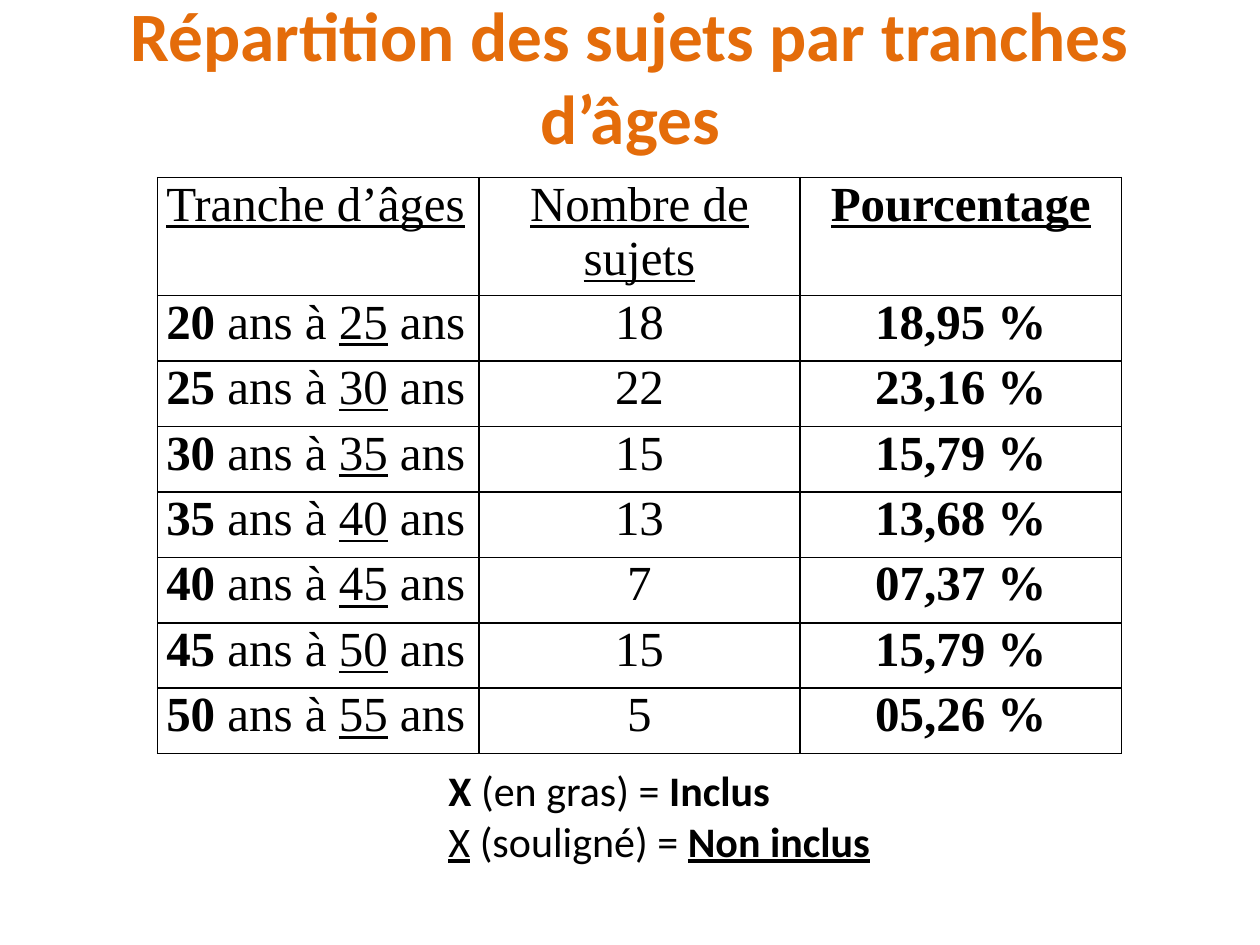
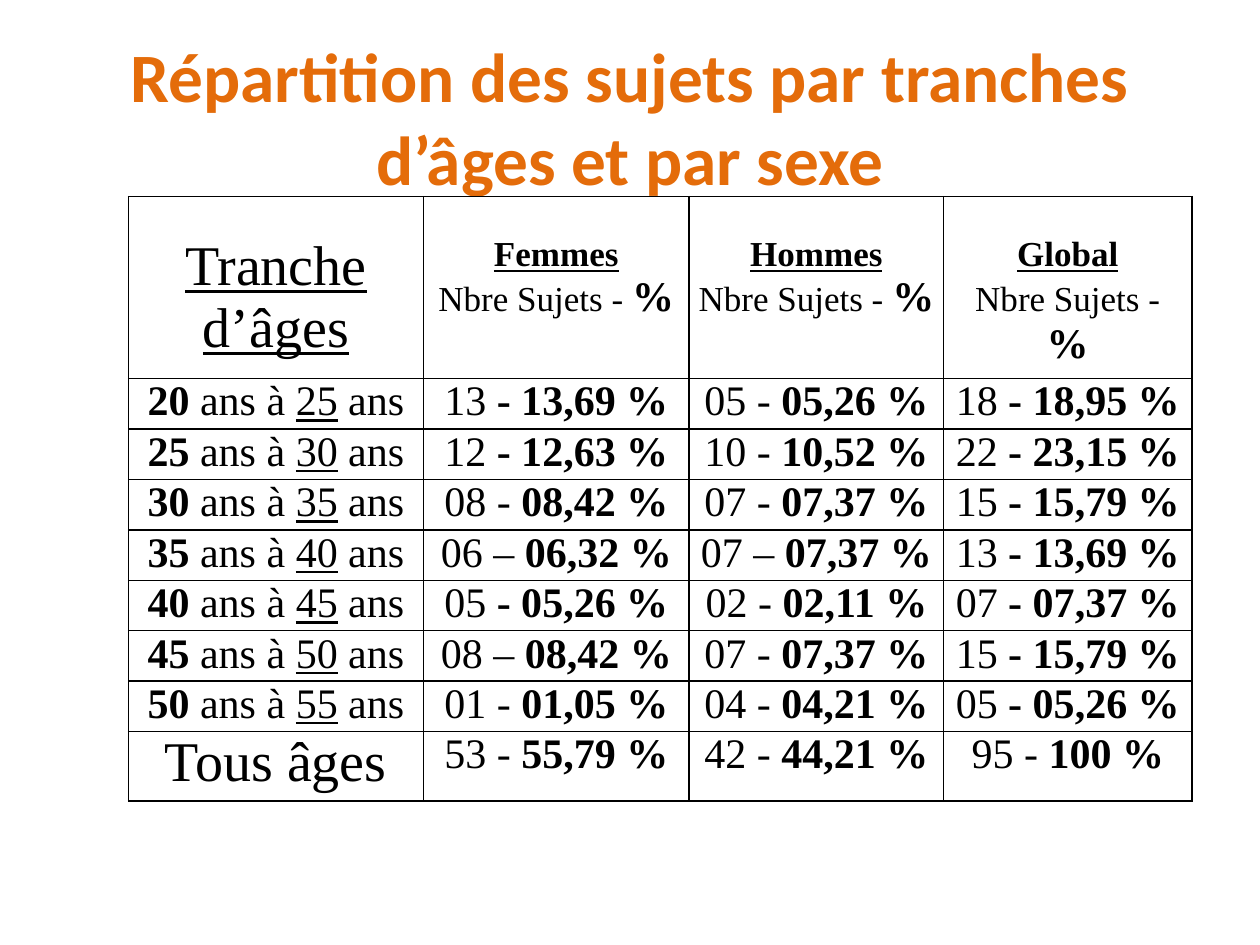
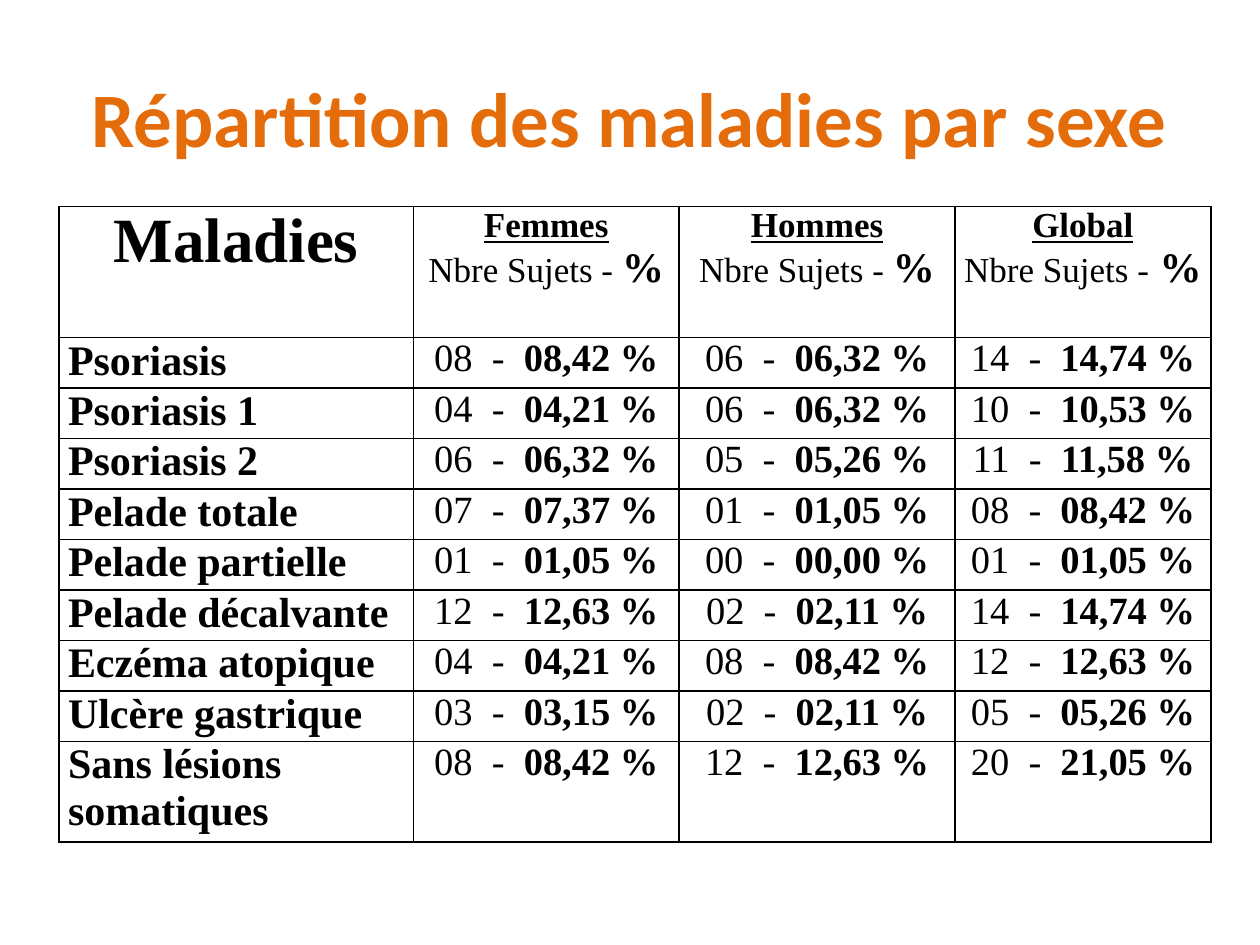
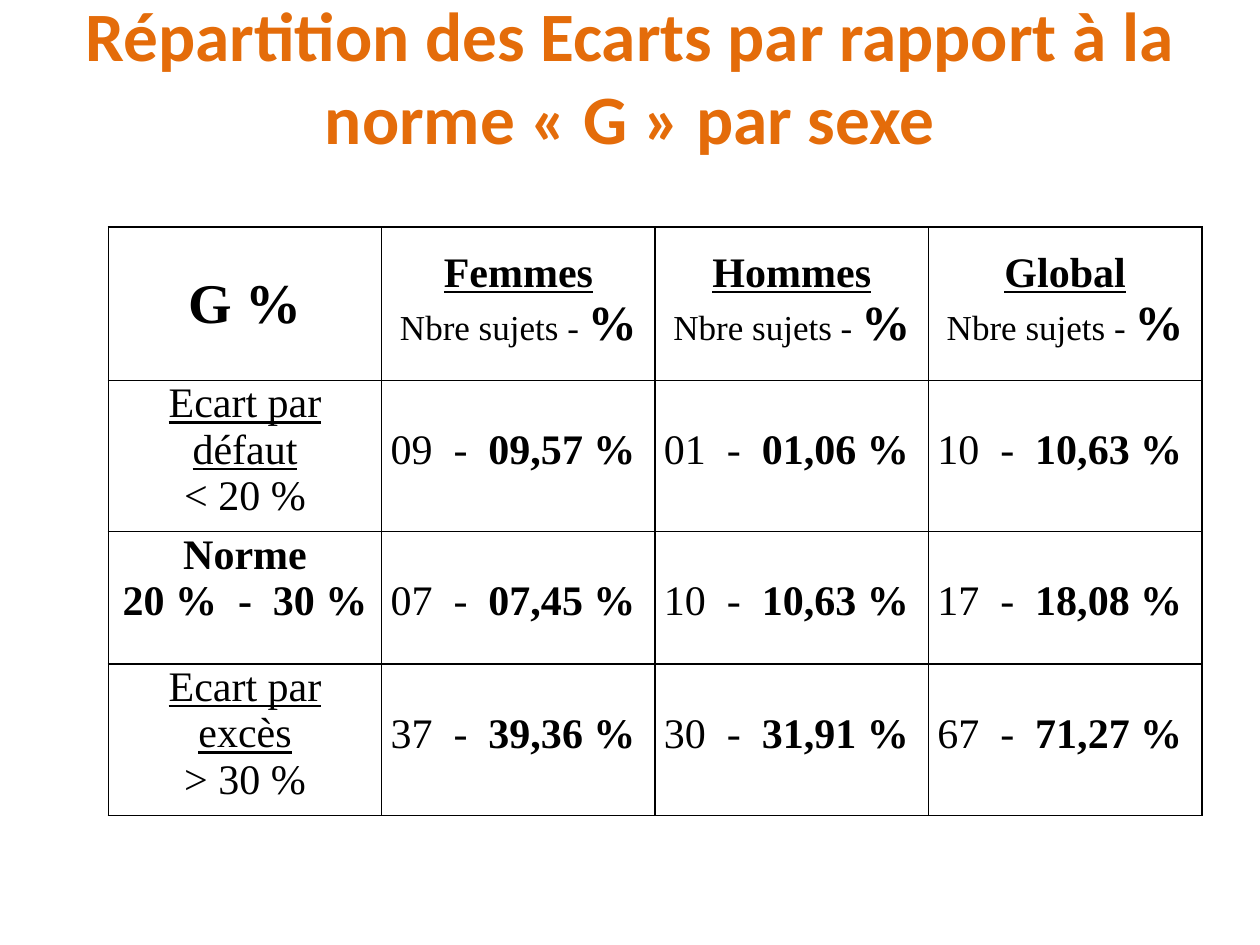
from dataclasses import dataclass

from lxml.etree import SubElement
from pptx import Presentation
from pptx.dml.color import RGBColor
from pptx.enum.text import MSO_ANCHOR, PP_ALIGN
from pptx.oxml.ns import qn
from pptx.util import Inches, Pt

COLORS = {"title": "E46C0A", "text": "000000"}
TITLE_FONT = "Calibri"
TABLE_FONT = "Times New Roman"
LEFT, CENTER = PP_ALIGN.LEFT, PP_ALIGN.CENTER


@dataclass
class Line:
    """A paragraph; *...* marks bold text and _..._ underlined text."""
    text: str
    size: float
    bold_size: float = 0
    align: PP_ALIGN = CENTER
    spacing: float = 1.0


def split_runs(text):
    """Yield (text, bold, underline) for each stretch of marked text."""
    bold = underline = False
    chunk = ""
    for character in text:
        if character not in "*_":
            chunk += character
            continue
        if chunk:
            yield chunk, bold, underline
        chunk = ""
        if character == "*":
            bold = not bold
        else:
            underline = not underline
    if chunk:
        yield chunk, bold, underline


def write(frame, lines, font=TABLE_FONT, color="text"):
    for index, line in enumerate(lines):
        paragraph = frame.add_paragraph() if index else frame.paragraphs[0]
        paragraph.alignment = line.align
        paragraph.line_spacing = line.spacing
        for text, bold, underline in split_runs(line.text):
            run = paragraph.add_run()
            run.text = text
            run.font.name = font
            run.font.size = Pt(bold and line.bold_size or line.size)
            run.font.bold = bold
            run.font.underline = underline
            run.font.color.rgb = RGBColor.from_string(COLORS[color])


class Deck:
    def __init__(self):
        self.presentation = Presentation()
        self.presentation.slide_width = Inches(10)
        self.presentation.slide_height = Inches(7.5)
        self.slide = None

    def new_slide(self, title, size=39.6, raised=0):
        layout = self.presentation.slide_layouts[6]
        self.slide = self.presentation.slides.add_slide(layout)
        frame = self.text(0.5, 0.3, 9, 1.25, [Line(f"*{title}*", size)], color="title")
        frame.vertical_anchor = MSO_ANCHOR.MIDDLE
        frame.margin_bottom = Inches(0.05 + raised)

    def text(self, left, top, width, height, lines, color="text"):
        shape = self.slide.shapes.add_textbox(
            Inches(left), Inches(top), Inches(width), Inches(height))
        frame = shape.text_frame
        frame.word_wrap = True
        write(frame, lines, TITLE_FONT, color)
        return frame

    def table(self, left, top, widths, heights, rows, tops=None):
        """tops maps (row, column) to the space above the text of that cell."""
        shape = self.slide.shapes.add_table(
            len(heights), len(widths), Inches(left), Inches(top),
            Inches(sum(widths)), Inches(sum(heights)))
        table = shape.table
        table.first_row = table.horz_banding = False
        for column, width in zip(table.columns, widths):
            column.width = Inches(width)
        for row, height in zip(table.rows, heights):
            row.height = Inches(height)
        for row_index, row in enumerate(rows):
            for column_index, lines in enumerate(row):
                cell = table.cell(row_index, column_index)
                cell.margin_left = cell.margin_right = Inches(0.07)
                cell.margin_top = Inches((tops or {}).get((row_index, column_index), 0))
                cell.margin_bottom = 0
                write(cell.text_frame, lines)
                self.borders(cell)
                cell.fill.background()

    def borders(self, cell):
        properties = cell._tc.get_or_add_tcPr()
        for side in ("a:lnL", "a:lnR", "a:lnT", "a:lnB"):
            border = SubElement(properties, qn(side), w=str(Pt(1)))
            fill = SubElement(border, qn("a:solidFill"))
            SubElement(fill, qn("a:srgbClr"), val=COLORS["text"])


def age_label(start):
    return f"*{start}* ans à _{start + 5}_ ans"


def sex_headers(endings, size, label, label_size, percent_size, spacing=1.0):
    return [[Line(f"*_{sex}_*", size, spacing=spacing),
             Line(label + ending, label_size, percent_size)]
            for sex, ending in zip(("Femmes", "Hommes", "Global"), endings)]


def cells(texts, size, align=CENTER):
    return [[Line(text, size, align=align)] for text in texts]


def main():
    deck = Deck()
    ages = range(20, 55, 5)
    raised = 0.66

    # Subjects by age group
    deck.new_slide("Répartition des sujets par tranches d’âges", raised=raised)
    counts = [("18", "18,95"), ("22", "23,16"), ("15", "15,79"), ("13", "13,68"),
              ("7", "07,37"), ("15", "15,79"), ("5", "05,26")]
    rows = [cells(["_Tranche d’âges_"], 28, LEFT)
            + cells(["_Nombre de sujets_", "*_Pourcentage_*"], 28)]
    for age, (count, percent) in zip(ages, counts):
        rows.append(cells([age_label(age)], 28, LEFT)
                    + cells([count, f"*{percent} %*"], 28))
    deck.table(1.25, 1.41, [2.55] * 3, [0.86] + [0.52] * 7, rows)
    legend = deck.text(2.03, 6.02, 5.47, 0.91, [
        Line("*X *(en gras) = *Inclus*", 24, align=LEFT),
        Line("_X_ (souligné) = *_Non inclus_*", 24, align=LEFT)])
    legend.margin_left = Inches(1.53)

    # Subjects by age group and sex
    deck.new_slide("Répartition des sujets par tranches d’âges et par sexe")
    shares = [
        ("13* - 13,69 %*", "05 - *05,26 %*", "18* - 18,95 %*"),
        ("12* - 12,63 %*", "10 - *10,52 %*", "22* - 23,15 %*"),
        ("08 - *08,42 %*", "07 - *07,37 %*", "15* - 15,79 %*"),
        ("06 – *06,32 %*", "07 – *07,37 %*", "13* - 13,69 %*"),
        ("05* - 05,26 %*", "02 - *02,11 %*", "07* - 07,37 %*"),
        ("08 – *08,42 %*", "07 - *07,37 %*", "15* - 15,79 %*"),
        ("01 - *01,05 %*", "04 - *04,21 %*", "05* - 05,26 %*")]
    endings = [" *%*", " *%*", "* %*"]
    rows = [cells(["_Tranche d’âges_"], 32)
            + sex_headers(endings, 20, "Nbre Sujets -", 20, 24)]
    rows += [cells([age_label(age), *share], 24) for age, share in zip(ages, shares)]
    rows.append(cells(["Tous âges"], 32)
                + cells(["53 - *55,79 %*", "42 - *44,21 %*", "95 - *100 %*"], 24))
    deck.table(1.02, 1.56, [2.34, 2.11, 2.02, 1.97], [1.4] + [0.39] * 7 + [0.55],
               rows, {(0, column): 0.31 for column in range(4)})

    # Diseases by sex
    deck.new_slide("Répartition des maladies par sexe", size=44)
    diseases = [
        ("Psoriasis", "08  -  *08,42 %*", "06  -  *06,32 %*", "14  -  *14,74 %*"),
        ("Psoriasis 1", "04  -  *04,21 %*", "06  -  *06,32 %*", "10  -  *10,53 %*"),
        ("Psoriasis 2", "06  -  *06,32 %*", "05  -  *05,26 %*", "11  -  *11,58 %*"),
        ("Pelade totale", "07  -  *07,37 %*", "01  -  *01,05 %*", "08  -  *08,42 %*"),
        ("Pelade partielle", "01  -  *01,05 %*", "00  -  *00,00 %*", "01  -  *01,05 %*"),
        ("Pelade décalvante", "12  -  *12,63 %*", "02  -  *02,11 %*", "14  -  *14,74 %*"),
        ("Eczéma atopique", "04  -  *04,21 %*", "08  -  *08,42 %*", "12  -  *12,63 %*"),
        ("Ulcère gastrique", "03  -  *03,15 %*", "02  -  *02,11 %*", "05  -  *05,26 %*"),
        ("Sans lésions somatiques", "08  -  *08,42 %*", "12  -  *12,63 %*",
         "20  -  *21,05 %*")]
    rows = [cells(["*Maladies*"], 36)
            + sex_headers(endings, 20, "Nbre Sujets -", 20, 24)]
    rows += [cells([f"*{name}*"], 24, LEFT) + cells(share, 22)
             for name, *share in diseases]
    deck.table(0.47, 1.64, [2.81, 2.11, 2.19, 2.03], [1.04] + [0.37] * 8 + [0.73], rows)

    # Deviations from the norm by sex
    deck.new_slide("Répartition des Ecarts par rapport à la norme « G » par sexe",
                   raised=raised)
    deviations = [
        (("_Ecart par défaut_", "< 20 %"),
         ("09  -  *09,57 %*", "01  -  *01,06 %*", "10  -  *10,63 %*")),
        (("*Norme*", "*20 %  -  30 %*"),
         ("07  -  *07,45 %*", "10  -  *10,63 %*", "17  -  *18,08 %*")),
        (("_Ecart par excès_", "> 30 %"),
         ("37  -  *39,36 %*", "30  -  *31,91 %*", "67  -  *71,27 %*"))]
    rows = [cells(["*G %*"], 32)
            + sex_headers([" *%*"] * 3, 24, "Nbre sujets -", 20, 28, spacing=1.5)]
    rows += [[[Line(text, 24) for text in label]] + cells(share, 24, LEFT)
             for label, share in deviations]
    tops = {(row, column): 0.37 for row in range(1, 4) for column in range(1, 4)}
    tops[0, 0] = 0.37
    deck.table(0.86, 1.8, [2.17] * 4, [1.22, 1.1, 1.05, 1.1], rows, tops)

    deck.presentation.save("out.pptx")


if __name__ == "__main__":
    main()
